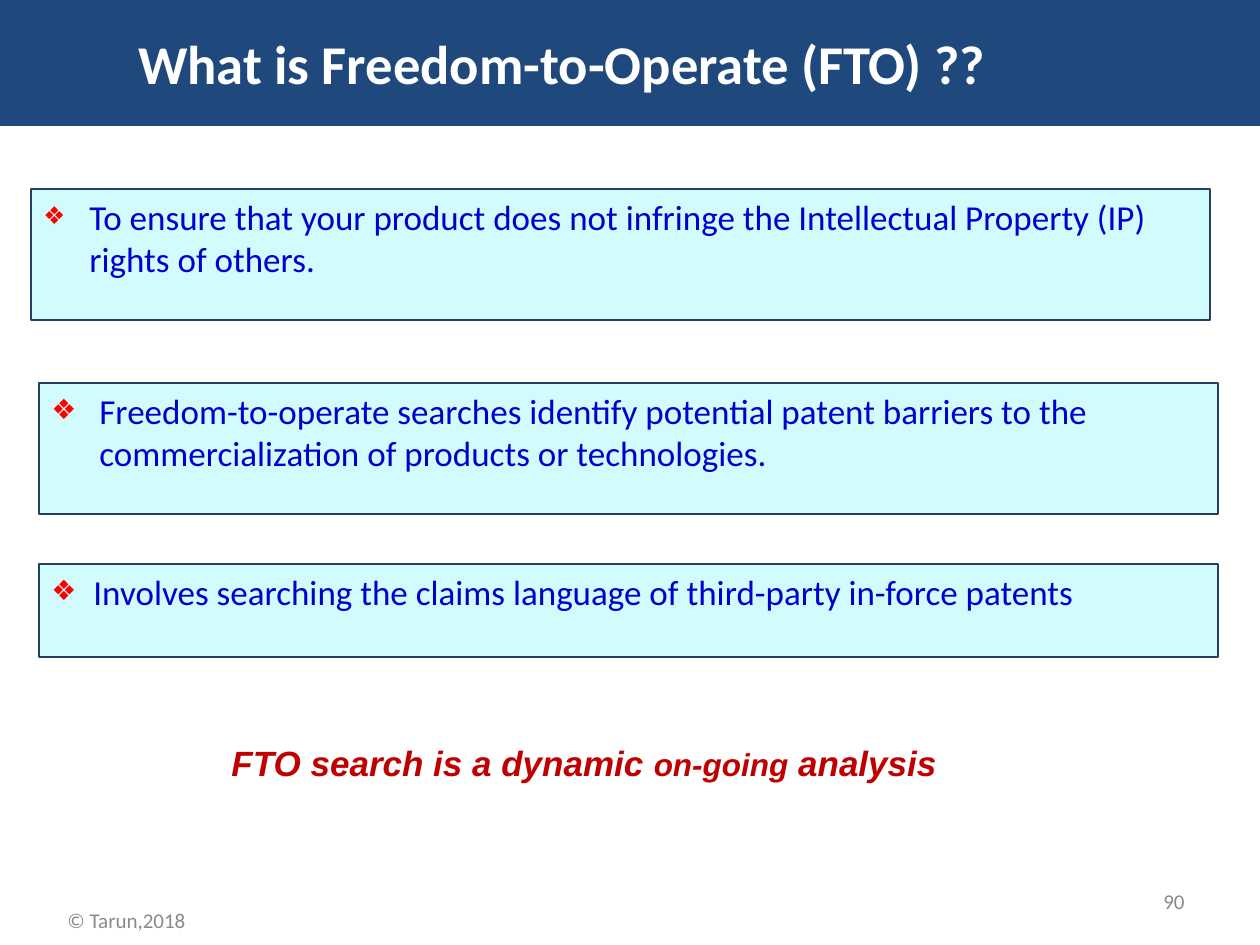
import lxml.etree
import pptx
import pptx.dml.color
import pptx.enum.text
import pptx.oxml.ns
import pptx.util

RGBColor = pptx.dml.color.RGBColor
Align = pptx.enum.text.PP_ALIGN
Anchor = pptx.enum.text.MSO_ANCHOR

NAVY = RGBColor(0x1F, 0x49, 0x7D)
PALE_CYAN = RGBColor(0xD1, 0xFB, 0xFD)
BORDER = RGBColor(0x25, 0x40, 0x61)
BLUE = RGBColor(0x00, 0x00, 0xCC)
RED = RGBColor(0xFF, 0x00, 0x00)
DARK_RED = RGBColor(0xC0, 0x00, 0x00)
GRAY = RGBColor(0x89, 0x89, 0x89)
WHITE = RGBColor(0xFF, 0xFF, 0xFF)
EMU_PER_PX = 914400 / 126


def px(length):
    """Turn pixels into EMU."""
    return pptx.util.Emu(round(length * EMU_PER_PX))


class SlideBuilder:
    """Holds the text style and the current slide."""

    body_font = "Calibri"
    accent_font = "Arial"

    def __init__(self, presentation):
        self.slide = presentation.slides.add_slide(presentation.slide_layouts[5])

    def style(self, font, size, color, name=None, bold=False, italic=False):
        font.name = name or self.body_font
        font.size = pptx.util.Pt(size)
        font.color.rgb = color
        font.bold = bold
        font.italic = italic

    def title(self, text, height, indent):
        shape = self.slide.shapes.title
        shape.left, shape.top, shape.width, shape.height = 0, 0, px(1260), px(height)
        shape.fill.solid()
        shape.fill.fore_color.rgb = NAVY
        frame = shape.text_frame
        frame.text = text
        frame.auto_size = pptx.enum.text.MSO_AUTO_SIZE.NONE
        frame.vertical_anchor = Anchor.MIDDLE
        frame.margin_left = px(indent)
        paragraph = frame.paragraphs[0]
        paragraph.alignment = Align.LEFT
        self.style(paragraph.font, 31.2, WHITE, bold=True)

    def bullet(self, paragraph, indent, percent):
        properties = paragraph._p.get_or_add_pPr()
        properties.set("marL", str(px(indent)))
        properties.set("indent", str(-px(indent)))
        qn = pptx.oxml.ns.qn
        color = lxml.etree.SubElement(properties, qn("a:buClr"))
        lxml.etree.SubElement(color, qn("a:srgbClr"), val=str(RED))
        lxml.etree.SubElement(properties, qn("a:buSzPct"), val=str(percent * 1000))
        lxml.etree.SubElement(properties, qn("a:buFont"), typeface=self.accent_font)
        lxml.etree.SubElement(properties, qn("a:buChar"), char="❖")

    def statement(self, text, left, top, height, indent, percent):
        shape = self.slide.shapes.add_shape(
            pptx.enum.shapes.MSO_SHAPE.RECTANGLE, px(left), px(top), px(1179), px(height))
        shape.shadow.inherit = False
        shape.fill.solid()
        shape.fill.fore_color.rgb = PALE_CYAN
        shape.line.color.rgb = BORDER
        shape.line.width = pptx.util.Pt(0.75)
        frame = shape.text_frame
        frame.word_wrap = True
        frame.vertical_anchor = Anchor.TOP
        frame.text = text
        paragraph = frame.paragraphs[0]
        paragraph.alignment = Align.LEFT
        self.bullet(paragraph, indent, percent)
        self.style(paragraph.font, 20, BLUE)

    def text_box(self, left, top, width, height, anchor, align):
        frame = self.slide.shapes.add_textbox(
            px(left), px(top), px(width), px(height)).text_frame
        frame.word_wrap = True
        frame.vertical_anchor = anchor
        paragraph = frame.paragraphs[0]
        paragraph.alignment = align
        return paragraph

    def conclusion(self, parts):
        paragraph = self.text_box(219, 735, 760, 55, Anchor.TOP, Align.LEFT)
        for text, size in parts:
            run = paragraph.add_run()
            run.text = text
            self.style(run.font, size, DARK_RED, self.accent_font, True, True)

    def footer(self, text, left, top, width, align):
        paragraph = self.text_box(left, top, width, 50, Anchor.MIDDLE, align)
        paragraph.text = text
        self.style(paragraph.font, 12, GRAY)


def main():
    presentation = pptx.Presentation()
    presentation.slide_width = px(1260)
    presentation.slide_height = px(945)
    builder = SlideBuilder(presentation)
    builder.title("What is Freedom-to-Operate (FTO) ??", 126, 138)
    statements = [
        ("To ensure that your product does not infringe the Intellectual Property (IP) "
         "rights of others.", 31, 189, 131, 46, 70),
        ("Freedom-to-operate searches identify potential patent barriers to the "
         "commercialization of products or technologies.", 39, 383, 131, 48, 80),
        ("Involves searching the claims language of third-party in-force patents",
         39, 564, 93, 42, 80),
    ]
    for statement in statements:
        builder.statement(*statement)
    builder.conclusion([("FTO search is a dynamic ", 20), ("on-going", 18), (" analysis", 20)])
    builder.footer("© Tarun,2018", -73, 895, 399, Align.CENTER)
    builder.footer("90", 903, 876, 294, Align.RIGHT)
    presentation.save("out.pptx")


if __name__ == "__main__":
    main()
